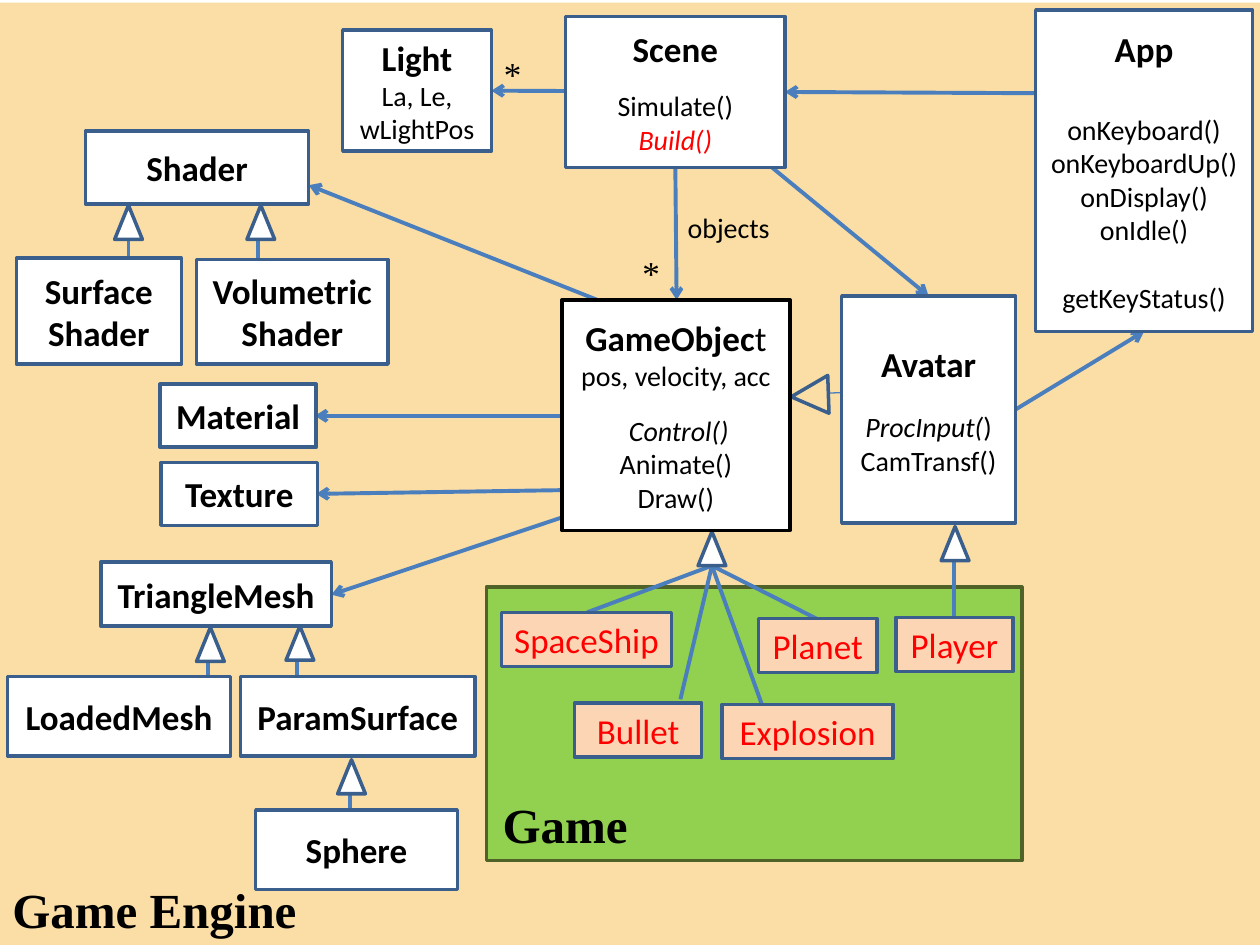
from typing import NamedTuple

from lxml import etree
from pptx import Presentation
from pptx.dml.color import RGBColor
from pptx.enum.shapes import MSO_CONNECTOR, MSO_SHAPE
from pptx.enum.text import MSO_ANCHOR, PP_ALIGN
from pptx.oxml.ns import qn
from pptx.util import Inches, Pt

RECTANGLE = MSO_SHAPE.RECTANGLE
TRIANGLE = MSO_SHAPE.ISOSCELES_TRIANGLE
STRAIGHT = MSO_CONNECTOR.STRAIGHT
MIDDLE = MSO_ANCHOR.MIDDLE
CENTER = PP_ALIGN.CENTER

COLORS = {
    "engine": "FADEA6", "game": "92D050", "game_border": "4F6228",
    "white": "FFFFFF", "black": "000000", "border": "3A5F8C",
    "link": "4B7EBC", "game_class": "FCD5B5", "red": "FF0000",
}
SANS, SERIF = "Calibri", "Times New Roman"


class Span(NamedTuple):
    text: str
    size: float = 16
    bold: bool = False
    italic: bool = False
    color: str = "black"
    font: str = SANS


class Line(NamedTuple):
    spans: list[Span]
    space_before: float = 0


class Box(NamedTuple):
    left: float
    top: float
    width: float
    height: float
    lines: list[Line]
    fill: str = "white"
    border: str | None = "border"


class Label(NamedTuple):
    left: float
    top: float
    width: float
    height: float
    span: Span


class Link(NamedTuple):
    start: tuple[float, float]
    end: tuple[float, float]
    arrow: bool = False
    width: float = 2.25


def title(text: str) -> Line:
    return Line([Span(text, 20, bold=True)])


def member(text: str, space_before: float = 0) -> Line:
    return Line([Span(text)], space_before)


def game_class(left: float, top: float, width: float, name: str) -> Box:
    return Box(left, top, width, 0.43, [Line([Span(name, 20, color="red")])], "game_class")


PANELS = [
    Box(0, 0.02, 10.04, 7.48, [], "engine", None),
    Box(3.86, 4.66, 4.25, 2.17, [], "game", "game_border"),
]

CLASSES = [
    # Engine classes with a name only
    Box(0.68, 1.04, 1.77, 0.58, [title("Shader")]),
    Box(0.13, 2.05, 1.31, 0.84, [title("Surface Shader")]),
    Box(1.56, 2.06, 1.52, 0.83, [title("Volumetric Shader")]),
    Box(1.27, 3.05, 1.24, 0.5, [title("Material")]),
    Box(1.28, 3.67, 1.24, 0.5, [title("Texture")]),
    Box(0.8, 4.46, 1.83, 0.51, [title("TriangleMesh")]),
    Box(0.06, 5.37, 1.77, 0.63, [title("LoadedMesh")]),
    Box(1.91, 5.37, 1.86, 0.63, [title("ParamSurface")]),
    Box(2.03, 6.43, 1.6, 0.63, [title("Sphere")]),
    # Engine classes with members
    Box(2.72, 0.24, 1.18, 0.96, [title("Light"), member("La, Le,"), member("wLightPos")]),
    Box(4.49, 0.13, 1.74, 1.2, [
        title("Scene"), member("Simulate()", 11),
        Line([Span("Build()", italic=True, color="red")])]),
    Box(8.22, 0.08, 1.72, 2.55, [
        title("App"), member("onKeyboard()", 24.4), member("onKeyboardUp()"),
        member("onDisplay()"), member("onIdle()"), member("getKeyStatus()", 19.5)]),
    Box(4.46, 2.38, 1.81, 1.83, [
        Line([Span("GameObjec", 20, bold=True), Span("t", 20)]),
        member("pos, velocity, acc"),
        Line([Span(" ", 14, italic=True), Span("Control()", italic=True)], 12.2),
        member("Animate()"), member("Draw()")], border="black"),
    Box(6.68, 2.35, 1.38, 1.8, [
        title("Avatar"), Line([Span("ProcInput(", italic=True), Span(")")], 14.6),
        member("CamTransf()")]),
    # Game classes
    game_class(3.98, 4.86, 1.35, "SpaceShip"),
    game_class(6.02, 4.91, 0.94, "Planet"),
    game_class(7.11, 4.9, 0.93, "Player"),
    game_class(4.56, 5.58, 1.01, "Bullet"),
    game_class(5.73, 5.59, 1.36, "Explosion"),
]

FORK = (5.65, 4.49)
LINKS = [
    # Associations
    Link((8.22, 0.74), (6.23, 0.73), True),
    Link((6.23, 0.73), (3.9, 0.72), True),
    Link((5.36, 1.33), (5.37, 2.38), True),
    Link((5.97, 1.2), (7.37, 2.35), True),
    Link((8.06, 3.25), (9.08, 2.63), True),
    Link((4.74, 2.38), (2.45, 1.47), True),
    Link((4.46, 3.3), (2.5, 3.3), True),
    Link((4.48, 3.89), (2.51, 3.92), True),
    Link((4.45, 4.11), (2.63, 4.72), True),
    # Inheritance stems
    Link((1.02, 2.04), (1.02, 1.87)),
    Link((2.05, 2.07), (2.05, 1.86)),
    Link((1.65, 5.36), (1.65, 5.25)),
    Link((2.36, 5.37), (2.36, 5.22)),
    Link((2.78, 6.3), (2.78, 6.42)),
    Link((7.57, 4.45), (7.57, 4.9)),
    Link((6.58, 3.12), (6.84, 3.11), width=0.75),
    *(Link(FORK, end) for end in [(4.66, 4.86), (5.4, 5.55), (6.05, 5.6), (6.48, 4.91)]),
]

# Left and top of each upright inheritance triangle
TRIANGLES = [(0.91, 1.63), (1.96, 1.63), (1.56, 4.98), (2.27, 4.97),
             (2.68, 6.03), (5.54, 4.22), (7.47, 4.18)]

LABELS = [
    Label(3.9, 0.37, 0.34, 0.44, Span("*", 20, font=SERIF)),
    Label(5, 1.95, 0.34, 0.44, Span("*", 20, font=SERIF)),
    Label(5.36, 1.62, 0.86, 0.37, Span("objects")),
    Label(0, 6.93, 2.48, 0.57, Span("Game Engine", 28, bold=True, font=SERIF)),
    Label(3.89, 6.26, 1.2, 0.57, Span("Game", 28, bold=True, font=SERIF)),
]


def rgb(name: str) -> RGBColor:
    return RGBColor.from_string(COLORS[name])


def add_span(paragraph, span: Span) -> None:
    run = paragraph.add_run()
    run.text = span.text
    font = run.font
    font.name, font.size = span.font, Pt(span.size)
    font.bold, font.italic = span.bold, span.italic
    font.color.rgb = rgb(span.color)


def style_shape(shape, fill: str | None, border: str | None) -> None:
    shape.shadow.inherit = False
    if fill:
        shape.fill.solid()
        shape.fill.fore_color.rgb = rgb(fill)
    else:
        shape.fill.background()
    if border:
        shape.line.color.rgb = rgb(border)
        shape.line.width = Pt(2)
    else:
        shape.line.fill.background()


def add_box(slide, box: Box) -> None:
    shape = slide.shapes.add_shape(RECTANGLE, *map(Inches, box[:4]))
    style_shape(shape, box.fill, box.border)
    frame = shape.text_frame
    frame.word_wrap = True
    frame.vertical_anchor = MIDDLE
    frame.margin_left = frame.margin_right = Inches(0.05)
    for index, line in enumerate(box.lines):
        paragraph = frame.add_paragraph() if index else frame.paragraphs[0]
        paragraph.alignment = CENTER
        paragraph.space_before = Pt(line.space_before)
        for span in line.spans:
            add_span(paragraph, span)


def add_link(slide, link: Link) -> None:
    connector = slide.shapes.add_connector(
        STRAIGHT, *map(Inches, (*link.start, *link.end)))
    connector.line.color.rgb = rgb("link")
    connector.line.width = Pt(link.width)
    properties = connector._element.spPr
    if link.arrow:
        etree.SubElement(properties.find(qn("a:ln")), qn("a:tailEnd"), type="arrow")
    etree.SubElement(properties, qn("a:effectLst"))


def add_label(slide, label: Label) -> None:
    frame = slide.shapes.add_textbox(*map(Inches, label[:4])).text_frame
    frame.word_wrap = False
    add_span(frame.paragraphs[0], label.span)


def main() -> None:
    presentation = Presentation()
    presentation.slide_width, presentation.slide_height = Inches(10), Inches(7.5)
    slide = presentation.slides.add_slide(presentation.slide_layouts[6])

    for panel in PANELS:
        add_box(slide, panel)
    for link in LINKS:
        add_link(slide, link)
    for left, top in TRIANGLES:
        triangle = slide.shapes.add_shape(
            TRIANGLE, *map(Inches, (left, top, 0.22, 0.27)))
        style_shape(triangle, "white", "border")

    # Sideways triangle from Avatar to GameObject
    builder = slide.shapes.build_freeform(Inches(6.28), Inches(3.15))
    builder.add_line_segments([(Inches(6.57), Inches(2.98)), (Inches(6.58), Inches(3.28))])
    style_shape(builder.convert_to_shape(), None, "border")

    for box in CLASSES:
        add_box(slide, box)
    for label in LABELS:
        add_label(slide, label)
    presentation.save("out.pptx")


if __name__ == "__main__":
    main()
